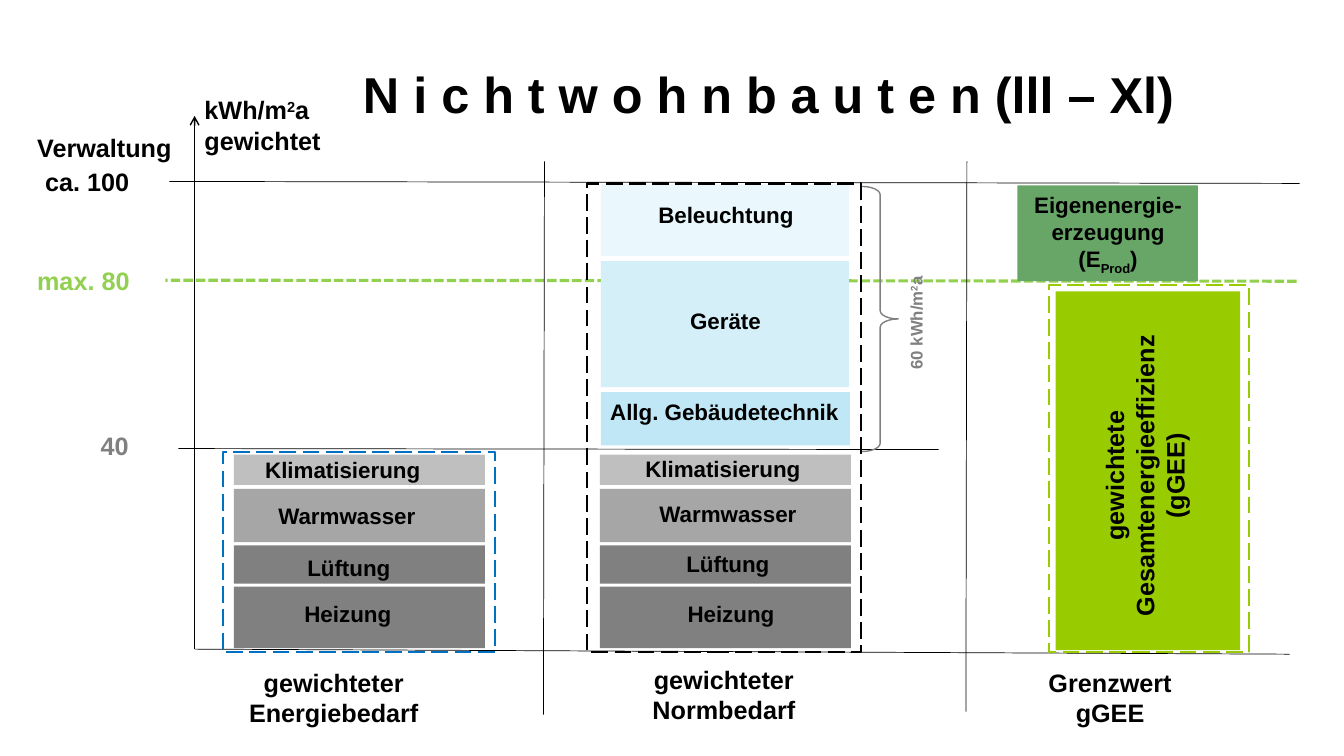
from dataclasses import dataclass

import pptx
import pptx.dml.color
import pptx.enum.dml
import pptx.enum.shapes
import pptx.enum.text
import pptx.oxml.ns
import pptx.util
from lxml import etree

PX = 9144
COLORS = {
    "black": "000000", "gray": "808080", "midgray": "A6A6A6", "lightgray": "BFBFBF",
    "limit": "92D050", "lime": "99CC00", "leaf": "68A668", "frame": "0070C0",
    "technik": "C0E7F6", "geraete": "D5EFF9", "licht": "EAF7FC",
}
DASH = pptx.enum.dml.MSO_LINE
SHAPES = pptx.enum.shapes.MSO_SHAPE
ALIGN = pptx.enum.text.PP_ALIGN


@dataclass(frozen=True)
class Box:
    left: int
    top: int
    width: int
    height: int


@dataclass(frozen=True)
class Bar:
    box: Box
    fill: str


@dataclass(frozen=True)
class Outline:
    box: Box
    color: str
    points: float = 1.5
    dash: DASH | None = DASH.LONG_DASH
    shape: SHAPES = SHAPES.RECTANGLE


@dataclass(frozen=True)
class Line:
    start: tuple[int, int]
    end: tuple[int, int]
    color: str = "black"
    points: float = 0.5
    dash: DASH | None = None
    arrow: bool = False


@dataclass(frozen=True)
class Label:
    box: Box
    lines: tuple[str, ...]
    size: int = 16
    color: str = "black"
    align: ALIGN = ALIGN.CENTER
    shift: int = 0
    rotation: int = 0
    vert: str = ""


@dataclass(frozen=True)
class Demand:
    name: str
    top: int
    height: int
    fill: str
    label_centers: tuple[int, int]
    label_tops: tuple[int, int]


def rgb(name: str) -> pptx.dml.color.RGBColor:
    return pptx.dml.color.RGBColor.from_string(COLORS[name])


def emu(*lengths: int) -> list[pptx.util.Emu]:
    return [pptx.util.Emu(length * PX) for length in lengths]


def place(box: Box) -> list[pptx.util.Emu]:
    return emu(box.left, box.top, box.width, box.height)


def draw_bar(shapes, bar: Bar) -> None:
    rect = shapes.add_shape(SHAPES.RECTANGLE, *place(bar.box))
    rect.shadow.inherit = False
    rect.fill.solid()
    rect.fill.fore_color.rgb = rgb(bar.fill)
    rect.line.fill.background()


def style_line(line, color: str, points: float, dash: DASH | None) -> None:
    line.color.rgb = rgb(color)
    line.width = pptx.util.Pt(points)
    if dash is not None:
        line.dash_style = dash


def draw_outline(shapes, outline: Outline) -> None:
    shape = shapes.add_shape(outline.shape, *place(outline.box))
    shape.shadow.inherit = False
    shape.fill.background()
    style_line(shape.line, outline.color, outline.points, outline.dash)
    if outline.shape == SHAPES.RIGHT_BRACE:
        shape.adjustments[0] = 0.23


def draw_line(shapes, line: Line) -> None:
    straight = pptx.enum.shapes.MSO_CONNECTOR.STRAIGHT
    connector = shapes.add_connector(straight, *emu(*line.start, *line.end))
    style_line(connector.line, line.color, line.points, line.dash)
    properties = connector._element.spPr
    qn = pptx.oxml.ns.qn
    if line.arrow:
        etree.SubElement(properties.find(qn("a:ln")), qn("a:tailEnd"), type="arrow")
    etree.SubElement(properties, qn("a:effectLst"))


def style_paragraph(paragraph, size: int, color: str, align: ALIGN) -> None:
    paragraph.alignment = align
    paragraph.font.name = "Arial"
    paragraph.font.size = pptx.util.Pt(size)
    paragraph.font.bold = True
    paragraph.font.color.rgb = rgb(color)


def draw_label(shapes, label: Label) -> None:
    text_box = shapes.add_textbox(*place(label.box))
    text_box.rotation = label.rotation
    frame = text_box.text_frame
    frame.word_wrap = True
    if label.vert:
        frame._txBody.bodyPr.set("vert", label.vert)
    for number, text in enumerate(label.lines):
        paragraph = frame.add_paragraph() if number else frame.paragraphs[0]
        style_paragraph(paragraph, label.size, label.color, label.align)
        for part, piece in enumerate(text.split("|")):
            run = paragraph.add_run()
            run.text = piece
            if part % 2:
                run._r.get_or_add_rPr().set("baseline", str(label.shift))


def draw_title(title, text: str) -> None:
    title.left, title.top, title.width, title.height = emu(350, 58, 838, 71)
    frame = title.text_frame
    frame.text = text
    frame.word_wrap = True
    frame.auto_size = pptx.enum.text.MSO_AUTO_SIZE.NONE
    frame.vertical_anchor = pptx.enum.text.MSO_ANCHOR.TOP
    style_paragraph(frame.paragraphs[0], 36, "black", ALIGN.LEFT)


COLUMN_LEFTS = (232, 595)
DEMANDS = [
    Demand("Klimatisierung", 451, 30, "lightgray", (340, 717), (448, 447)),
    Demand("Warmwasser", 485, 53, "midgray", (344, 722), (493, 491)),
    Demand("Lüftung", 541, 38, "gray", (346, 722), (545, 541)),
    Demand("Heizung", 582, 61, "gray", (345, 725), (590, 590)),
]
LINES = [
    Line((1286, 279), (164, 278), "limit", 2.25, DASH.SQUARE_DOT),
    Line((193, 644), (193, 115), points=1, arrow=True),
    Line((931, 446), (177, 445)),
    Line((193, 644), (1279, 649)),
    Line((1289, 182), (168, 180)),
    Line((959, 160), (958, 706)),
    Line((540, 160), (539, 709)),
]
BARS = [
    Bar(Box(left, demand.top, 249, demand.height), demand.fill)
    for left in COLUMN_LEFTS for demand in DEMANDS
] + [
    Bar(Box(596, 389, 247, 53), "technik"),
    Bar(Box(596, 259, 246, 125), "geraete"),
    Bar(Box(596, 183, 246, 71), "licht"),
    Bar(Box(1009, 184, 179, 95), "leaf"),
    Bar(Box(1047, 289, 183, 356), "lime"),
]
OUTLINES = [
    Outline(Box(221, 448, 270, 199), "frame"),
    Outline(Box(582, 182, 272, 465), "black"),
    Outline(Box(1040, 283, 199, 364), "lime"),
    Outline(Box(855, 185, 36, 263), "gray", 1, None, SHAPES.RIGHT_BRACE),
]
LABELS = [
    Label(Box(demand.label_centers[column] - 97, demand.label_tops[column], 194, 37), (demand.name,))
    for column in range(len(COLUMN_LEFTS)) for demand in DEMANDS
] + [
    Label(Box(631, 195, 178, 37), ("Beleuchtung",)),
    Label(Box(660, 300, 119, 37), ("Geräte",)),
    Label(Box(582, 390, 273, 37), ("Allg. Gebäudetechnik",)),
    Label(Box(987, 185, 224, 90), ("Eigenenergie-erzeugung", "(E|Prod|)"), shift=-25000),
    Label(Box(1085, 312, 111, 320), ("gewichtete Gesamtenergieeffizienz", "(gGEE)"), 18, vert="vert270"),
    Label(Box(232, 657, 198, 71), ("gewichteter Energiebedarf",), 18),
    Label(Box(620, 654, 196, 71), ("gewichteter Normbedarf",), 18),
    Label(Box(1009, 657, 184, 71), ("Grenzwert gGEE",), 18),
    Label(Box(193, 89, 150, 71), ("kWh/m|2|a", "gewichtet"), 18, align=ALIGN.LEFT, shift=30000),
    Label(Box(27, 126, 176, 40), ("Verwaltung",), 18, align=ALIGN.LEFT),
    Label(Box(35, 160, 110, 40), ("ca. 100",), 18, align=ALIGN.LEFT),
    Label(Box(27, 258, 120, 40), ("max. 80",), 18, "limit", ALIGN.LEFT),
    Label(Box(90, 422, 52, 40), ("40",), 18, "gray", ALIGN.LEFT),
    Label(Box(834, 279, 157, 38), ("60 kWh/m|2|a",), 12, "gray", ALIGN.LEFT, 30000, 270),
]


def main() -> None:
    deck = pptx.Presentation()
    deck.slide_width, deck.slide_height = emu(1333, 750)
    slide = deck.slides.add_slide(deck.slide_layouts.get_by_name("Title Only"))
    draw_title(slide.shapes.title, "N i c h t w o h n b a u t e n (lll – Xl)")
    for draw, items in (
        (draw_line, LINES), (draw_bar, BARS), (draw_outline, OUTLINES), (draw_label, LABELS),
    ):
        for item in items:
            draw(slide.shapes, item)
    deck.save("out.pptx")


if __name__ == "__main__":
    main()
